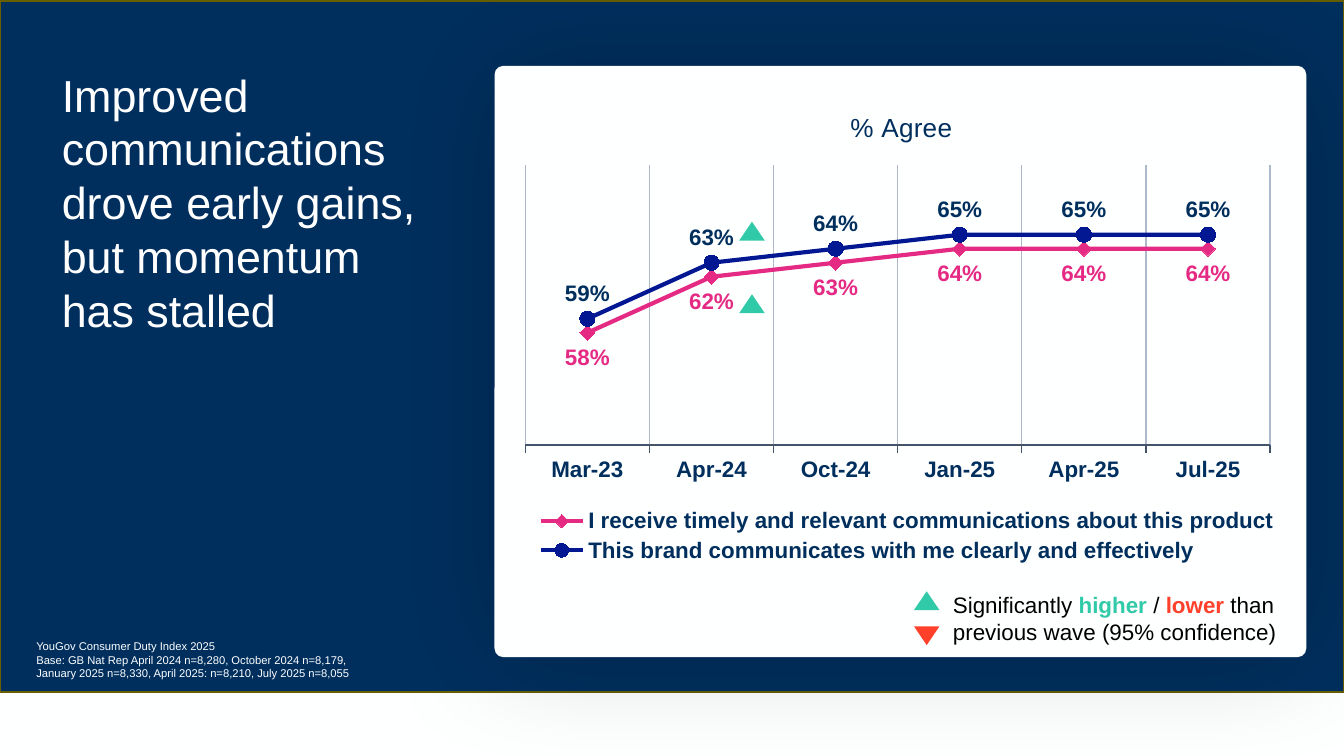
from lxml import etree
from pptx import Presentation
from pptx import util as u
from pptx.chart.data import CategoryChartData
from pptx.dml.color import RGBColor
from pptx.enum import chart as charts, shapes, text
from pptx.oxml import parse_xml
from pptx.oxml.ns import nsdecls, qn

PX = 9144  # 100 px to the inch
NAVY = RGBColor(0x00, 0x2F, 0x5E)
OLIVE = RGBColor(0x66, 0x5E, 0x00)
WHITE = RGBColor(0xFE, 0xFF, 0xFF)
BLACK = RGBColor(0x00, 0x00, 0x00)
PINK = RGBColor(0xE5, 0x2A, 0x84)
BLUE = RGBColor(0x01, 0x18, 0x92)
GREEN = RGBColor(0x31, 0xCA, 0xA8)
RED = RGBColor(0xFF, 0x41, 0x2C)
SLATE = RGBColor(0x44, 0x54, 0x6A)
MIST = RGBColor(0xAD, 0xB9, 0xCA)

WAVES = ["Mar-23", "Apr-24", "Oct-24", "Jan-25", "Apr-25", "Jul-25"]
Mark, Place = charts.XL_MARKER_STYLE, charts.XL_LABEL_POSITION
# name, values, line colour, marker, label position, label colour
SERIES = [
    ("I receive timely and relevant communications about this product",
     [0.58, 0.62, 0.63, 0.64, 0.64, 0.64], PINK, Mark.DIAMOND, Place.BELOW, PINK),
    ("This brand communicates with me clearly and effectively",
     [0.59, 0.63, 0.64, 0.65, 0.65, 0.65], BLUE, Mark.CIRCLE, Place.ABOVE, NAVY),
]


def px(*lengths):
    return [u.Emu(length * PX) for length in lengths]


def style(font, size, color, bold=False):
    font.name, font.size, font.bold = "Arial", u.Pt(size), bold
    font.color.rgb = color


def add_span(para, words, size=12, color=BLACK, bold=False):
    span = para.add_run()
    span.text = words
    style(span.font, size, color, bold)


def add_box(page, left, top, width, height):
    box = page.shapes.add_textbox(*px(left, top, width, height))
    frame = box.text_frame
    frame.word_wrap = True
    frame.margin_left = frame.margin_right = frame.margin_top = frame.margin_bottom = 0
    return frame


def add_block(page, kind, left, top, width, height, fill):
    block = page.shapes.add_shape(kind, *px(left, top, width, height))
    block.shadow.inherit = False
    block.fill.solid()
    block.fill.fore_color.rgb = fill
    block.line.fill.background()
    return block


def add_triangle(page, left, top, color=GREEN, down=False):
    triangle = add_block(page, shapes.MSO_SHAPE.ISOSCELES_TRIANGLE, left, top, 19, 14, color)
    triangle.rotation = 180 if down else 0


def add_backdrop(page, left, top, width, height):
    backdrop = add_block(page, shapes.MSO_SHAPE.RECTANGLE, left, top, width, height, NAVY)
    backdrop.line.color.rgb = OLIVE
    backdrop.line.width = u.Pt(1)


def add_card(page, left, top, width, height):
    card = add_block(page, shapes.MSO_SHAPE.ROUNDED_RECTANGLE, left, top, width, height, WHITE)
    card.adjustments[0] = 0.015
    # Soft wide shadow
    effects = card._element.spPr.find(qn("a:effectLst"))
    effects.append(parse_xml(
        f'<a:outerShdw {nsdecls("a")} blurRad="{u.Pt(64.8)}" dist="0" dir="16320000" '
        'rotWithShape="0"><a:srgbClr val="000000"><a:alpha val="19000"/></a:srgbClr>'
        '</a:outerShdw>'))


def add_title(page, left, top, width, height):
    title = page.shapes.title
    title.left, title.top, title.width, title.height = px(left, top, width, height)
    page.shapes.element.append(title.element)  # in front of the backdrop
    frame = title.text_frame
    frame.word_wrap = True
    frame.auto_size = text.MSO_AUTO_SIZE.NONE
    frame.vertical_anchor = text.MSO_ANCHOR.TOP
    para = frame.paragraphs[0]
    para.alignment = text.PP_ALIGN.LEFT
    add_span(para, "Improved communications drove early gains, but momentum has stalled",
             size=24, color=RGBColor(0xFF, 0xFF, 0xFF))


def set_layout(parent, position, inner=False, **values):
    for old in parent.findall(qn("c:layout")):
        parent.remove(old)
    layout = parse_xml(f'<c:layout {nsdecls("c")}><c:manualLayout/></c:layout>')
    settings = {"layoutTarget": "inner"} if inner else {}
    settings.update(xMode="edge", yMode="edge", **values)
    for name, value in settings.items():
        etree.SubElement(layout[0], qn("c:" + name)).set("val", str(value))
    parent.insert(position, layout)


def add_trend(page, left, top, width, height):
    data = CategoryChartData(number_format="0%")
    data.categories = WAVES
    for name, values, *_ in SERIES:
        data.add_series(name, values)
    chart = page.shapes.add_chart(charts.XL_CHART_TYPE.LINE_MARKERS,
                                  *px(left, top, width, height), data).chart
    style(chart.font, 10, NAVY)

    # Title and legend
    chart.has_title = True
    add_span(chart.chart_title.text_frame.paragraphs[0], "% Agree", size=14, color=NAVY)
    chart.has_legend = True
    chart.legend.position = charts.XL_LEGEND_POSITION.BOTTOM
    chart.legend.include_in_layout = False
    style(chart.legend.font, 12, NAVY, bold=True)

    # Placement of title, plot and legend
    set_layout(chart.chart_title._element, 1, x=0.43, y=0.04)
    set_layout(chart._chartSpace.chart.plotArea, 0, inner=True, x=0.03, y=0.16, w=0.93, h=0.57)
    set_layout(chart.legend._element, 1, x=0.04, y=0.85)

    # Axes
    values_axis = chart.value_axis
    values_axis.minimum_scale, values_axis.maximum_scale = 0.5, 0.7
    values_axis.has_major_gridlines = False
    values_axis.visible = False
    waves_axis = chart.category_axis
    waves_axis.major_tick_mark = charts.XL_TICK_MARK.OUTSIDE
    waves_axis.has_major_gridlines = True
    style(waves_axis.tick_labels.font, 12, NAVY, bold=True)
    for line, color in ((waves_axis.format.line, SLATE),
                        (waves_axis.major_gridlines.format.line, MIST)):
        line.color.rgb = color
        line.width = u.Pt(0.75)

    # Lines, markers and labels
    for series, (_, _, color, mark, place, label_color) in zip(chart.plots[0].series, SERIES):
        series.smooth = False
        series.format.line.color.rgb = color
        series.format.line.width = u.Pt(2.25)
        series.marker.style, series.marker.size = mark, 8
        series.marker.format.fill.solid()
        series.marker.format.fill.fore_color.rgb = color
        series.marker.format.line.color.rgb = color
        labels = series.data_labels
        labels.show_value = True
        labels.position = place
        labels.number_format, labels.number_format_is_linked = "0%", False
        style(labels.font, 12, label_color, bold=True)


def add_key(page, left, top, width, height):
    add_triangle(page, left, top)
    add_triangle(page, left, top + 26, RED, down=True)
    para = add_box(page, left + 29, top, width - 29, height).paragraphs[0]
    add_span(para, "Significantly ")
    add_span(para, "higher", color=GREEN, bold=True)
    add_span(para, " / ")
    add_span(para, "lower", color=RED, bold=True)
    add_span(para, " than previous wave (95% confidence)")


def add_source(page, left, top, width, height):
    frame = add_box(page, left, top, width, height)
    add_span(frame.paragraphs[0], "YouGov Consumer Duty Index 2025", size=6, color=WHITE)
    add_span(frame.add_paragraph(),
             "Base: GB Nat Rep April 2024 n=8,280, October 2024 n=8,179, "
             "January 2025 n=8,330, April 2025: n=8,210, July 2025 n=8,055",
             size=6, color=WHITE)


def main():
    deck = Presentation()
    deck.slide_width = u.Inches(10)
    deck.slide_height = deck.slide_width * 9 // 16
    page = deck.slides.add_slide(deck.slide_layouts[5])
    page.background.fill.solid()
    page.background.fill.fore_color.rgb = WHITE
    add_backdrop(page, 0, 1, 1000, 514)
    add_card(page, 368, 49, 604, 440)
    add_trend(page, 373, 64, 596, 366)
    add_title(page, 36, 45, 288, 109)
    add_key(page, 680, 440, 310, 40)
    add_source(page, 27, 476, 252, 30)
    # Significant rises in April 2024
    for top in (165, 219):
        add_triangle(page, 550, top)
    deck.save("out.pptx")


if __name__ == "__main__":
    main()
